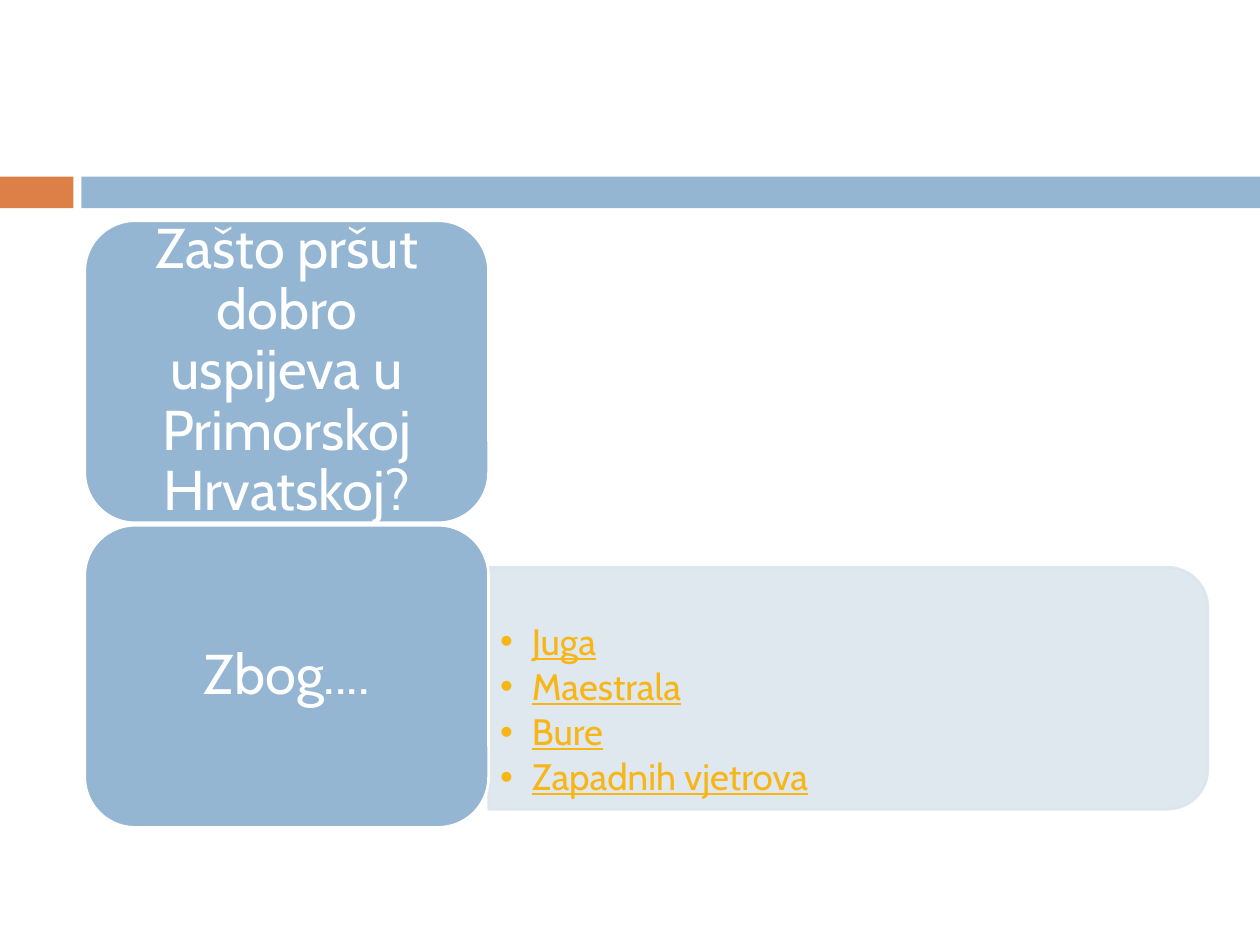
"""Build the slide on why prosciutto thrives in coastal Croatia."""
import pptx
import pptx.util
import pptx.dml.color
import pptx.enum.shapes
import pptx.enum.text
import pptx.oxml.ns
from lxml import etree

Cm, Pt = pptx.util.Cm, pptx.util.Pt
KIND = pptx.enum.shapes.MSO_SHAPE
ALIGN = pptx.enum.text.PP_ALIGN

QUESTION = "Zašto pršut dobro uspijeva u Primorskoj Hrvatskoj?"
ANSWER = "Zbog...."
WINDS = ["Juga", "Maestrala", "Bure", "Zapadnih vjetrova"]

COLORS = {"blue": "94B6D2", "orange": "DD8047", "pale": "DCE5EE",
          "white": "FFFFFF", "gold": "F7B615"}
FONT = "Cabin"

SLIDE_W, SLIDE_H = 25.4, 19.05
BAND_TOP, BAND_H, ACCENT_W, BAND_LEFT = 3.56, 0.64, 1.48, 1.64
CARD_LEFT, CARD_TOP, CARD_W, CARD_H, CARD_PITCH = 1.71, 4.45, 8.14, 6.09, 6.14
CARD_PAD = 0.3
PANEL_W, PANEL_H = 14.5, 4.88
LIST_W, LIST_H = 14.25, 4.39

CARD_TEXT = {"alignment": ALIGN.CENTER, "line_spacing": 0.9,
             "space_before": Pt(0), "space_after": Pt(0)}
LIST_TEXT = {"alignment": ALIGN.LEFT, "line_spacing": 0.9,
             "space_before": Pt(0), "space_after": Pt(3.15)}
CARD_FONT = {"name": FONT, "size": Pt(32), "underline": False}
LIST_FONT = {"name": FONT, "size": Pt(21), "underline": True}
CARD_INSETS = (0.33, 0.18, 0.33, 0.18)
LIST_INSETS = (0.23, 1.02, 0.23, 0.1)


def rgb(name):
    return pptx.dml.color.RGBColor.from_string(COLORS[name])


def set_all(target, values):
    for name, value in values.items():
        setattr(target, name, value)


def place(part, left, top, width, height):
    set_all(part, {"left": Cm(left), "top": Cm(top),
                   "width": Cm(width), "height": Cm(height)})


def add_block(slide, kind, box, fill, line=None):
    block = slide.shapes.add_shape(kind, *map(Cm, box))
    block.shadow.inherit = False
    block.fill.solid()
    block.fill.fore_color.rgb = rgb(fill)
    if line:
        block.line.color.rgb = rgb(line)
        block.line.width = Pt(1.5)
    else:
        block.line.fill.background()
    return block


def write(part, lines, insets, paragraph_format, font_format, color):
    frame = part.text_frame
    set_all(frame, {"word_wrap": True,
                    "auto_size": pptx.enum.text.MSO_AUTO_SIZE.NONE,
                    "vertical_anchor": pptx.enum.text.MSO_ANCHOR.MIDDLE})
    sides = ("margin_left", "margin_top", "margin_right", "margin_bottom")
    set_all(frame, dict(zip(sides, map(Cm, insets))))
    frame.text = "\n".join(lines)
    for paragraph in frame.paragraphs:
        set_all(paragraph, paragraph_format)
        for run in paragraph.runs:
            set_all(run.font, font_format)
            run.font.color.rgb = rgb(color)


def add_winds(slide, winds, center):
    panel = add_block(slide, KIND.ROUND_2_SAME_RECTANGLE,
                      (CARD_LEFT + CARD_W + (PANEL_W - PANEL_H) / 2,
                       center - PANEL_W / 2, PANEL_H, PANEL_W), "pale", "pale")
    panel.rotation = 90
    tag = pptx.oxml.ns.qn("a:srgbClr")
    for tint in panel.element.spPr.iter(tag):
        etree.SubElement(tint, pptx.oxml.ns.qn("a:alpha"), val="90000")

    place(winds, CARD_LEFT + CARD_W, center - LIST_H / 2, LIST_W, LIST_H)
    write(winds, WINDS, LIST_INSETS, LIST_TEXT, LIST_FONT, "gold")
    for paragraph in winds.text_frame.paragraphs:
        indents = paragraph.runs[0].font._element.getparent().getparent().get_or_add_pPr()
        indents.set("marL", str(Cm(0.64)))
        indents.set("indent", str(-Cm(0.64)))


def main():
    deck = pptx.Presentation()
    deck.slide_width, deck.slide_height = Cm(SLIDE_W), Cm(SLIDE_H)
    slide = deck.slides.add_slide(deck.slide_layouts[1])
    question, winds = slide.placeholders

    add_block(slide, KIND.RECTANGLE, (0, BAND_TOP, ACCENT_W, BAND_H), "orange")
    add_block(slide, KIND.RECTANGLE,
              (BAND_LEFT, BAND_TOP, SLIDE_W - BAND_LEFT, BAND_H), "blue")

    answer_top = CARD_TOP + CARD_PITCH
    add_winds(slide, winds, answer_top + CARD_H / 2 + 0.24)
    for top in (CARD_TOP, answer_top):
        card = add_block(slide, KIND.ROUNDED_RECTANGLE,
                         (CARD_LEFT, top, CARD_W, CARD_H), "blue", "white")
    answer_insets = [inset + CARD_PAD for inset in CARD_INSETS]
    write(card, [ANSWER], answer_insets, CARD_TEXT, CARD_FONT, "white")

    place(question, CARD_LEFT + CARD_PAD, CARD_TOP + CARD_PAD,
          CARD_W - 2 * CARD_PAD, CARD_H - 2 * CARD_PAD)
    write(question, [QUESTION], CARD_INSETS, CARD_TEXT, CARD_FONT, "white")
    for part in (question, winds):
        slide.shapes.element.append(part.element)

    deck.save("out.pptx")


if __name__ == "__main__":
    main()
